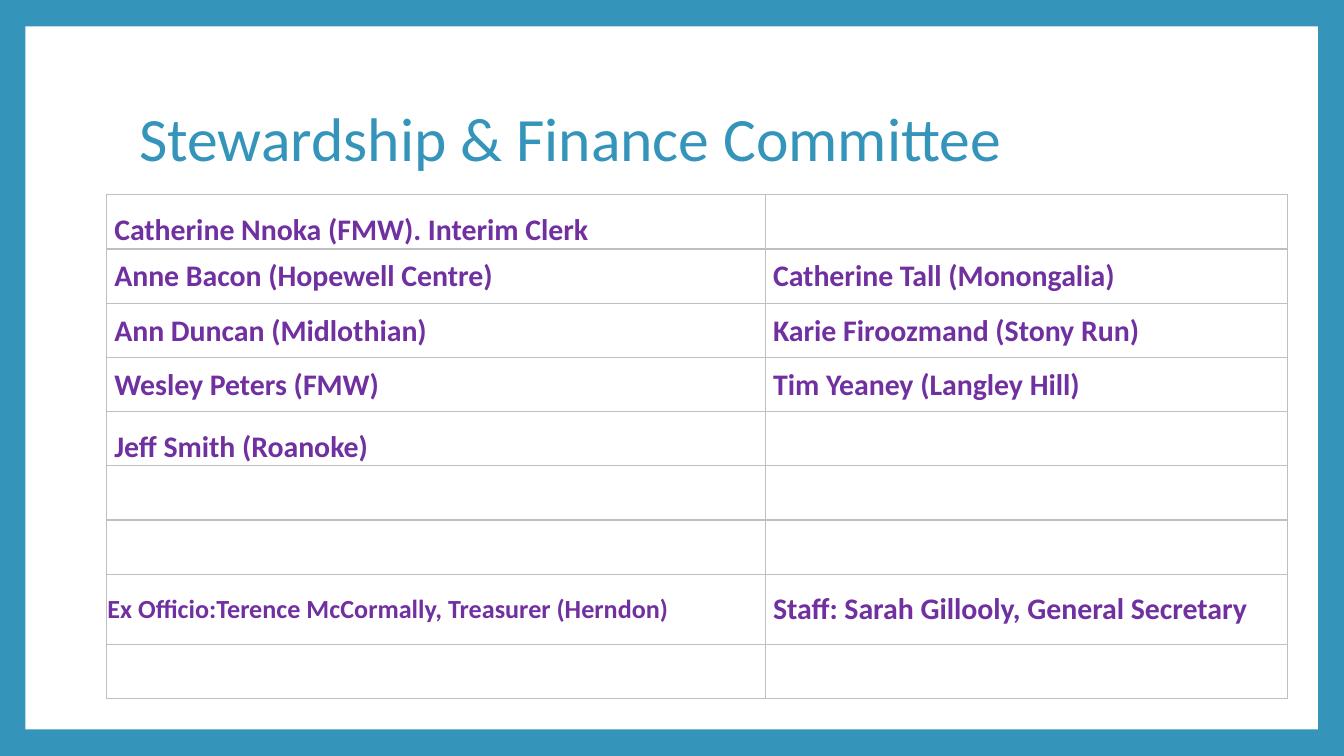
from pptx import Presentation
from pptx.dml.color import RGBColor
from pptx.enum.shapes import MSO_SHAPE
from pptx.enum.text import MSO_ANCHOR, PP_ALIGN
from pptx.oxml import parse_xml
from pptx.oxml.ns import nsdecls
from pptx.util import Cm, Pt

RECT = MSO_SHAPE.RECTANGLE
MIDDLE, BOTTOM = MSO_ANCHOR.MIDDLE, MSO_ANCHOR.BOTTOM
LEFT = PP_ALIGN.LEFT
BLUE, PURPLE, GREY, WHITE = "3494BA", "7030A0", "BFBFBF", "FFFFFF"

MEMBERS = [
    ("Catherine Nnoka (FMW). Interim Clerk", ""),
    ("Anne Bacon (Hopewell Centre)", "Catherine Tall (Monongalia)"),
    ("Ann Duncan (Midlothian)", "Karie Firoozmand (Stony Run)"),
    ("Wesley Peters (FMW)", "Tim Yeaney (Langley Hill)"),
    ("Jeff Smith (Roanoke)", ""),
    ("", ""),
    ("", ""),
    ("Ex Officio:Terence McCormally, Treasurer (Herndon)",
     "Staff: Sarah Gillooly, General Secretary"),
    ("", ""),
]
LOW_ROWS = (0, 4)      # text sits at the bottom of the cell
OFFICE_ROW = 7         # taller row for the officers


def color(code):
    return RGBColor.from_string(code)


def write(frame, text, size=16, code=PURPLE, bold=True, space=1.0):
    para = frame.paragraphs[0]
    para.text = text
    para.alignment = LEFT
    para.line_spacing = space
    font = para.font
    font.name, font.size, font.bold = "Calibri", Pt(size), bold
    font.color.rgb = color(code)


def add_panel(slide, left, top, width, height):
    panel = slide.shapes.add_shape(RECT, left, top, width, height)
    panel.shadow.inherit = False
    panel.fill.solid()
    panel.fill.fore_color.rgb = color(WHITE)
    panel.line.fill.background()
    # Keep the panel behind the title
    slide.shapes.title.element.addprevious(panel.element)


def add_title(slide, left, top, width, height):
    title = slide.shapes.title
    title.left, title.top, title.width, title.height = left, top, width, height
    frame = title.text_frame
    frame.word_wrap = True
    frame.vertical_anchor = MIDDLE
    write(frame, "Stewardship & Finance Committee", size=33, code=BLUE,
          bold=False, space=0.9)


def add_borders(cell):
    props = cell._tc.get_or_add_tcPr()
    for i, side in enumerate("LRTB"):
        props.insert(i, parse_xml(
            f'<a:ln{side} {nsdecls("a")} w="{Pt(0.75)}"><a:solidFill>'
            f'<a:srgbClr val="{GREY}"/></a:solidFill></a:ln{side}>'))


def add_members(slide, left, top, width, height):
    table = slide.shapes.add_table(
        len(MEMBERS), 2, left, top, width, height).table
    table.first_row = table.horz_banding = False

    # Column widths and row heights
    first = Cm(12.45)
    table.columns[0].width = first
    table.columns[1].width = width - first
    tall = Cm(1.32)
    plain = (height - tall) // (len(MEMBERS) - 1)

    for r, names in enumerate(MEMBERS):
        table.rows[r].height = tall if r == OFFICE_ROW else plain
        for c, name in enumerate(names):
            cell = table.cell(r, c)
            treasurer = r == OFFICE_ROW and c == 0
            cell.margin_left = Cm(0.02 if treasurer else 0.15)
            cell.margin_right = cell.margin_top = Cm(0.02)
            cell.margin_bottom = 0
            cell.vertical_anchor = BOTTOM if r in LOW_ROWS else MIDDLE
            cell.fill.background()
            write(cell.text_frame, name, size=14 if treasurer else 16)
            add_borders(cell)


def main():
    deck = Presentation()
    deck.slide_width, deck.slide_height = Cm(25.4), Cm(14.29)
    slide = deck.slides.add_slide(deck.slide_layouts[5])

    # Blue frame around a white panel
    slide.background.fill.solid()
    slide.background.fill.fore_color.rgb = color(BLUE)
    add_panel(slide, Cm(0.48), Cm(0.5), Cm(24.43), Cm(13.29))

    add_title(slide, Cm(2.38), Cm(1.27), Cm(20.57), Cm(2.82))
    add_members(slide, Cm(2.01), Cm(3.68), Cm(22.33), Cm(9.52))
    deck.save("out.pptx")


if __name__ == "__main__":
    main()
